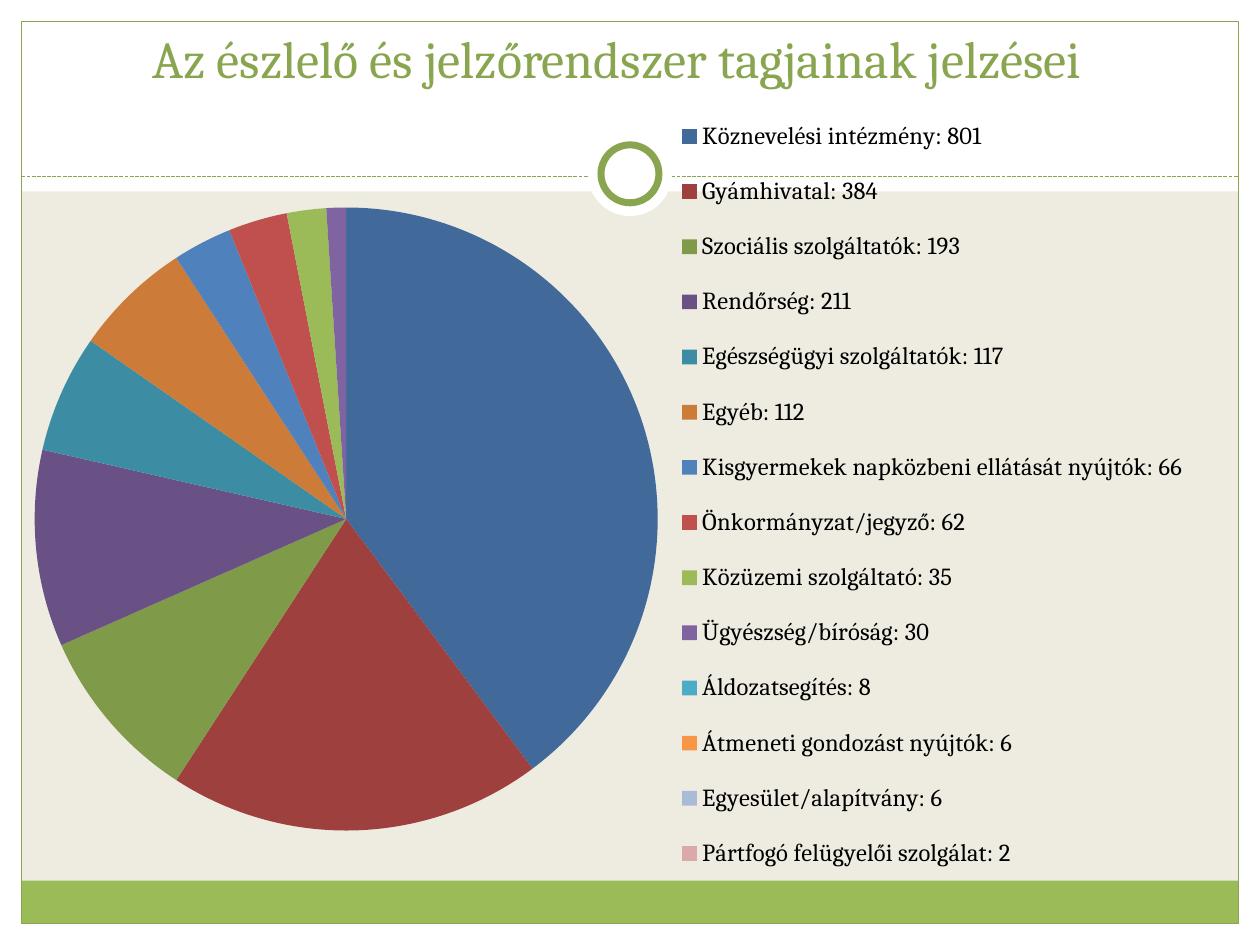
"""Build a slide with a framed background, a title and a pie chart of reports."""
from lxml import etree
from pptx import Presentation
from pptx import util as u
from pptx.chart.data import CategoryChartData
from pptx.dml.color import RGBColor
from pptx.enum import chart as ch, dml, shapes, text
from pptx.oxml import ns

FONT = "Cambria"
HUES = {"sand": "EEECE1", "white": "FFFFFF", "leaf": "9BBB59",
        "moss": "89A54F", "black": "000000"}
SLICES = ["416A9B", "9E413E", "7F9A48", "695185", "3C8DA3", "CC7B38",
          "4F81BD", "C0504D", "9BBB59", "8064A2", "4BACC6", "F79646",
          "AABAD7", "D9AAA9"]
REPORTS = {
    "Köznevelési intézmény": 801,
    "Gyámhivatal": 384,
    "Szociális szolgáltatók": 193,
    "Rendőrség": 211,
    "Egészségügyi szolgáltatók": 117,
    "Egyéb": 112,
    "Kisgyermekek napközbeni ellátását nyújtók": 66,
    "Önkormányzat/jegyző": 62,
    "Közüzemi szolgáltató": 35,
    "Ügyészség/bíróság": 30,
    "Áldozatsegítés": 8,
    "Átmeneti gondozást nyújtók": 6,
    "Egyesület/alapítvány": 6,
    "Pártfogó felügyelői szolgálat": 2,
}


def rgb(name):
    """Return the colour for a palette name."""
    return RGBColor.from_string(HUES[name])


def span(box):
    """Turn a box in inches into lengths."""
    return [u.Inches(side) for side in box]


def style(item, **vals):
    """Set each attribute of an item from its format values."""
    for key, val in vals.items():
        setattr(item, key, val)


def add_form(slide, kind, box, fill=None, line=None, width=0.75):
    """Add a flat preset shape."""
    form = slide.shapes.add_shape(kind, *span(box))
    form.shadow.inherit = False
    if fill:
        form.fill.solid()
        form.fill.fore_color.rgb = rgb(fill)
    else:
        form.fill.background()
    if line:
        form.line.color.rgb = rgb(line)
        form.line.width = u.Pt(width)
    else:
        form.line.fill.background()


def add_rule(slide, start, end):
    """Add the dashed line under the heading."""
    rule = slide.shapes.add_connector(
        shapes.MSO_CONNECTOR.STRAIGHT, *span(start + end))
    rule.line.color.rgb = rgb("moss")
    style(rule.line, width=u.Pt(0.75),
          dash_style=dml.MSO_LINE.SQUARE_DOT)
    etree.SubElement(rule._element.spPr, ns.qn("a:effectLst"))


def add_frame(slide, box):
    """Draw the margins, base band, border, rule and ring in the page box."""
    left, top, wide, high = box
    edge, head, base = 0.17, 1.52, 0.34
    right, foot = left + wide - edge, top + high - edge
    rect, oval = shapes.MSO_SHAPE.RECTANGLE, shapes.MSO_SHAPE.OVAL
    for side in ((left, foot, wide, edge), (left, top, wide, head),
                 (left, top, edge, high), (right, top, edge, high)):
        add_form(slide, rect, side, "white")
    inner = wide - 2 * edge
    add_form(slide, rect, (left + edge, foot - base, inner, base), "leaf")
    add_form(slide, rect, (left + edge, top + edge, inner, high - 2 * edge),
             line="moss")
    mid, level = left + wide / 2, top + 1.4
    add_rule(slide, (left + edge, level), (right, level))
    for size, line in ((0.67, None), (0.46, "moss")):
        ring = (mid - size / 2, top + 1.38 - size / 2, size, size)
        add_form(slide, oval, ring, "white", line, 4)


def add_title(slide, box, words):
    """Place the title placeholder in its box, above the frame."""
    title = slide.shapes.title
    slide.shapes._spTree.append(title._element)
    style(title, **dict(zip(("left", "top", "width", "height"), span(box))))
    frame = title.text_frame
    frame.text = words
    style(frame, vertical_anchor=text.MSO_ANCHOR.BOTTOM, word_wrap=True,
          auto_size=text.MSO_AUTO_SIZE.NONE)
    para = frame.paragraphs[0]
    para.alignment = text.PP_ALIGN.CENTER
    style(para.font, name=FONT, size=u.Pt(29.7))
    para.font.color.rgb = rgb("moss")


def set_place(node, index, box, inner=False):
    """Give a chart part a manual layout in fractions of the chart."""
    for old in node.findall(ns.qn("c:layout")):
        node.remove(old)
    plan = etree.Element(ns.qn("c:layout"))
    hand = etree.SubElement(plan, ns.qn("c:manualLayout"))
    vals = [("layoutTarget", "inner")] if inner else []
    vals += [("xMode", "edge"), ("yMode", "edge"), *zip("xywh", box)]
    for tag, val in vals:
        etree.SubElement(hand, ns.qn(f"c:{tag}")).set("val", str(val))
    node.insert(index, plan)


def add_pie(slide, box):
    """Add the pie chart of report shares in percent with its legend."""
    total = sum(REPORTS.values())
    data = CategoryChartData()
    data.categories = [f"{name}: {num}" for name, num in REPORTS.items()]
    data.add_series("Series 1", [round(100 * num / total)
                                 for num in REPORTS.values()])
    chart = slide.shapes.add_chart(
        ch.XL_CHART_TYPE.PIE, *span(box), data).chart
    style(chart, has_title=False, has_legend=True)
    style(chart.font, name=FONT, size=u.Pt(18))
    chart.font.color.rgb = rgb("black")
    plot, legend = chart.plots[0], chart.legend
    plot.vary_by_categories = True
    for index, hue in enumerate(SLICES):
        form = plot.series[0].points[index].format
        form.fill.solid()
        form.fill.fore_color.rgb = RGBColor.from_string(hue)
        form.line.fill.background()
    style(legend, position=ch.XL_LEGEND_POSITION.RIGHT,
          include_in_layout=False)
    style(legend.font, name=FONT, size=u.Pt(14))
    legend.font.color.rgb = rgb("black")
    area = chart._chartSpace.chart.plotArea
    set_place(area, 0, (0, 0.14, 0.52, 0.78), True)
    set_place(legend._element, 1, (0.5, 0, 0.47, 1))


def main():
    """Build and save the slide."""
    deck = Presentation()
    style(deck, slide_width=u.Inches(10), slide_height=u.Inches(7.5))
    slide = deck.slides.add_slide(deck.slide_layouts[5])
    slide.background.fill.solid()
    slide.background.fill.fore_color.rgb = rgb("sand")
    add_frame(slide, (0, 0, 10, 7.5))
    add_title(slide, (0, 0.21, 9.8, 0.55),
              "Az észlelő és jelzőrendszer tagjainak jelzései")
    add_pie(slide, (0.2, 0.76, 9.8, 6.34))
    deck.save("out.pptx")


if __name__ == "__main__":
    main()
